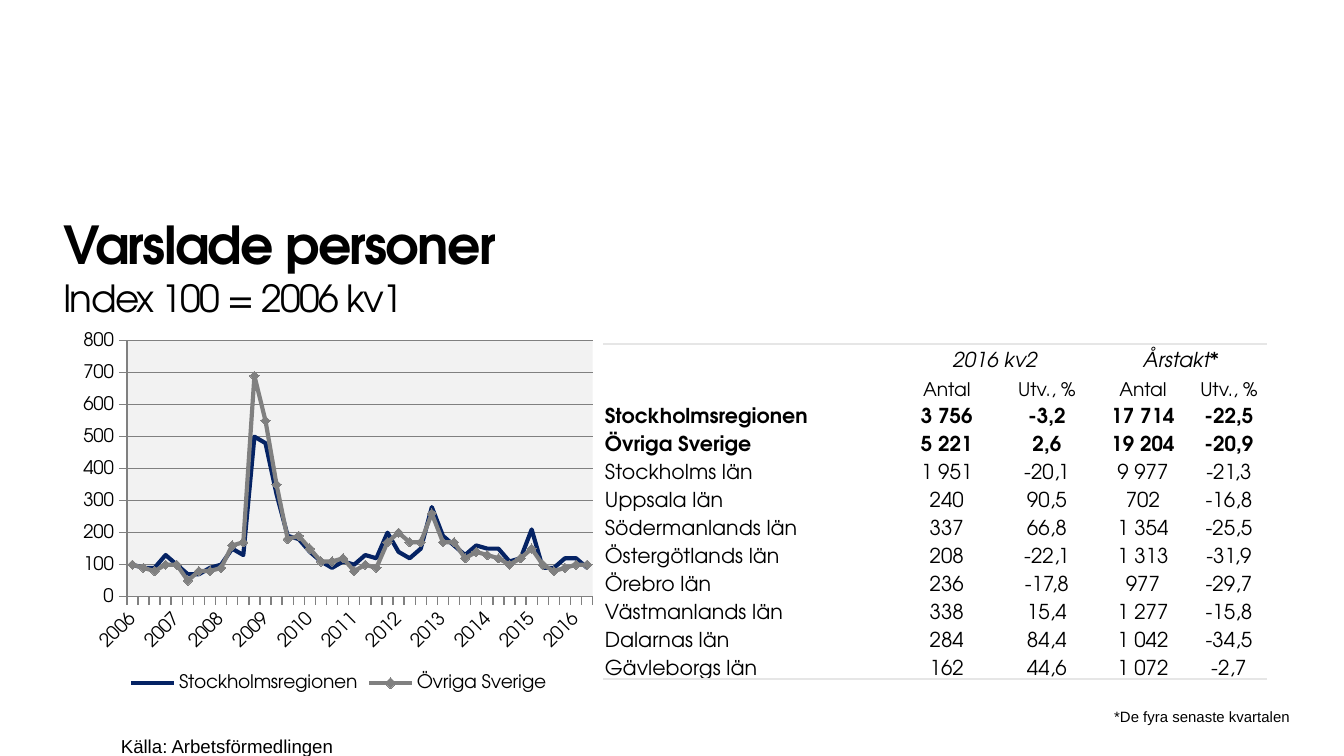
from lxml.etree import SubElement
from pptx import Presentation
from pptx.chart.data import CategoryChartData
from pptx.dml.color import RGBColor
from pptx.enum.chart import XL_CHART_TYPE, XL_LEGEND_POSITION, XL_MARKER_STYLE, XL_TICK_MARK
from pptx.enum.text import MSO_ANCHOR, PP_ALIGN
from pptx.oxml import parse_xml
from pptx.oxml.ns import nsdecls, qn
from pptx.util import Inches, Pt

WIDE, HIGH = 10, 10 * 9 / 16
GRID = 100  # columns and rows on the slide
FACE, PLAIN = "TeX Gyre Adventor", "Arial"
HUES = {"ink": "000000", "navy": "052364", "gray": "808080", "plot": "F2F2F2", "rule": "E6E6E6"}
BARE = "{2D5ABB26-0587-4C30-8999-92F81FD0307C}"  # table style without lines or fills

COLS = [2.17, 0.77, 0.72, 0.71, 0.57]  # column widths in inches
ROWS = [
    ["", "2016 kv2", "", "Årstakt*", ""],
    ["", "Antal", "Utv., %", "Antal", "Utv., %"],
    ["Stockholmsregionen", "3 756", "-3,2", "17 714", "-22,5"],
    ["Övriga Sverige", "5 221", "2,6", "19 204", "-20,9"],
    ["Stockholms län", "1 951", "-20,1", "9 977", "-21,3"],
    ["Uppsala län", "240", "90,5", "702", "-16,8"],
    ["Södermanlands län", "337", "66,8", "1 354", "-25,5"],
    ["Östergötlands län", "208", "-22,1", "1 313", "-31,9"],
    ["Örebro län", "236", "-17,8", "977", "-29,7"],
    ["Västmanlands län", "338", "15,4", "1 277", "-15,8"],
    ["Dalarnas län", "284", "84,4", "1 042", "-34,5"],
    ["Gävleborgs län", "162", "44,6", "1 072", "-2,7"],
]
# Quarterly index values, first quarter of 2006 onwards
REGION = [100, 90, 90, 130, 100, 70, 70, 90, 100, 150, 130, 500, 480, 320,
          190, 180, 140, 110, 90, 110, 100, 130, 120, 200, 140, 120, 150, 280,
          190, 160, 130, 160, 150, 150, 110, 120, 210, 90, 90, 120, 120, 90]
OTHERS = [100, 90, 80, 100, 100, 50, 80, 80, 90, 160, 170, 690, 550, 350,
          180, 190, 150, 110, 110, 120, 80, 100, 90, 170, 200, 170, 170, 260,
          170, 170, 120, 140, 130, 120, 100, 120, 150, 100, 80, 90, 100, 100]


def color(name):
    return RGBColor.from_string(HUES[name])


def place(col, row, cols, rows):
    """Turn grid columns and rows into left, top, width, height."""
    x, y = WIDE / GRID, HIGH / GRID
    return Inches(col * x), Inches(row * y), Inches(cols * x), Inches(rows * y)


def write(para, text, size=11, face=FACE, bold=False, italic=False, space=None):
    if not text:  # an empty line still needs its height
        SubElement(para._p, qn("a:endParaRPr"), sz=str(size * 100))
        return
    run = para.add_run()
    run.text = text
    font = run.font
    font.size, font.name = Pt(size), face
    font.bold, font.italic = bold, italic
    font.color.rgb = color("ink")
    if space is not None:
        font._element.set("spc", str(round(space * 100)))


def add_box(slide, area, wrap=True):
    frame = slide.shapes.add_textbox(*place(*area)).text_frame
    frame.margin_left = frame.margin_right = frame.margin_top = frame.margin_bottom = 0
    frame.word_wrap = wrap
    return frame.paragraphs[0]


def add_title(slide):
    para = add_box(slide, (4.7, 28.1, 62.1, 14.2))
    write(para, "Varslade personer", size=28, bold=True, space=-0.9)
    para.add_line_break()
    write(para, "Index 100 = 2006 kv1", size=20, space=-0.9)


def add_note(slide, text, area, size):
    para = add_box(slide, area, wrap=False)
    para.line_spacing = Pt(24)
    write(para, text, size=size, face=PLAIN)


def add_rule(cell, side):
    cell._tc.get_or_add_tcPr().append(parse_xml(
        f'<a:{side} {nsdecls("a")} w="12700"><a:solidFill>'
        f'<a:srgbClr val="{HUES["rule"]}"/></a:solidFill></a:{side}>'))


def add_grid(slide, area):
    last = len(ROWS) - 1
    table = slide.shapes.add_table(len(ROWS), len(COLS), *place(*area)).table
    table.first_row = table.horz_banding = False
    table._tbl.tblPr.find(qn("a:tableStyleId")).text = BARE
    for col, wide in zip(table.columns, COLS):
        col.width = Inches(wide)
    for r, row in enumerate(ROWS):
        for c, text in enumerate(row):
            cell = table.cell(r, c)
            cell.margin_left = cell.margin_right = cell.margin_top = Inches(0.01)
            cell.margin_bottom = 0
            cell.vertical_anchor = MSO_ANCHOR.BOTTOM
            if r in (0, last):
                add_rule(cell, "lnB" if r else "lnT")
            cell.fill.background()
            para = cell.text_frame.paragraphs[0]
            para.alignment = PP_ALIGN.CENTER if c else PP_ALIGN.LEFT
            write(para, text, size=10 if r == 1 else 11, bold=r in (2, 3), italic=r == 0)
    for c in (1, 3):  # each heading spans two columns
        table.cell(0, c).merge(table.cell(0, c + 1))


def set_plot(chart, **share):
    """Fix the inner plot area as shares of the chart and fill it."""
    area = chart._chartSpace.chart.plotArea
    for old in area.findall(qn("c:layout")):
        area.remove(old)
    spots = "".join(f'<c:{key} val="{val}"/>' for key, val in share.items())
    area.insert(0, parse_xml(
        f'<c:layout {nsdecls("c")}><c:manualLayout><c:layoutTarget val="inner"/>'
        f'<c:xMode val="edge"/><c:yMode val="edge"/>{spots}</c:manualLayout></c:layout>'))
    area.append(parse_xml(
        f'<c:spPr {nsdecls("c", "a")}><a:solidFill>'
        f'<a:srgbClr val="{HUES["plot"]}"/></a:solidFill></c:spPr>'))


def add_lines(slide, area):
    data = CategoryChartData(number_format="0")
    data.categories = ["" if i % 4 else str(2006 + i // 4) for i in range(len(REGION))]
    data.add_series("Stockholmsregionen", REGION)
    data.add_series("Övriga Sverige", OTHERS)
    chart = slide.shapes.add_chart(XL_CHART_TYPE.LINE_MARKERS, *place(*area), data).chart
    chart.has_title = False
    chart.font.name, chart.font.size = FACE, Pt(10)
    chart.font.color.rgb = color("ink")
    chart.has_legend = True
    chart.legend.position = XL_LEGEND_POSITION.BOTTOM
    chart.legend.include_in_layout = False
    set_plot(chart, x=0.1, y=0.04, w=0.88, h=0.69)

    # Axes
    axis = chart.value_axis
    axis.minimum_scale, axis.maximum_scale, axis.major_unit = 0, 800, 100
    axis.tick_labels.number_format = "#,##0"
    axis.tick_labels.number_format_is_linked = False
    axis.major_gridlines.format.line.color.rgb = color("gray")
    for line in (axis, chart.category_axis):
        line.major_tick_mark = XL_TICK_MARK.OUTSIDE
        line.format.line.color.rgb = color("gray")
    chart.category_axis.tick_labels.font.size = Pt(10)
    body = chart.category_axis._element.find(qn("c:txPr")).find(qn("a:bodyPr"))
    body.set("rot", "-2700000")

    # Series
    plot = chart.plots[0]
    plot.vary_by_categories = False
    marks = (XL_MARKER_STYLE.NONE, XL_MARKER_STYLE.DIAMOND)
    for line, hue, mark in zip(plot.series, ("navy", "gray"), marks):
        line.smooth = False
        line.format.line.color.rgb = color(hue)
        line.format.line.width = Pt(2.25)
        line.marker.style = mark
        if mark != XL_MARKER_STYLE.NONE:
            line.marker.size = 5
            line.marker.format.fill.solid()
            line.marker.format.fill.fore_color.rgb = color(hue)
            line.marker.format.line.color.rgb = color(hue)


def main():
    deck = Presentation()
    deck.slide_width, deck.slide_height = Inches(WIDE), Inches(HIGH)
    slide = deck.slides.add_slide(deck.slide_layouts[6])
    add_title(slide)
    add_note(slide, "Källa: Arbetsförmedlingen", (9, 94.3, 17, 5.7), 10)
    add_grid(slide, (44.9, 45.5, 49.4, 44.4))
    add_note(slide, "*De fyra senaste kvartalen", (82.9, 90, 14, 4.3), 8)
    add_lines(slide, (5.5, 43.1, 39.4, 49.1))
    deck.save("out.pptx")


if __name__ == "__main__":
    main()
